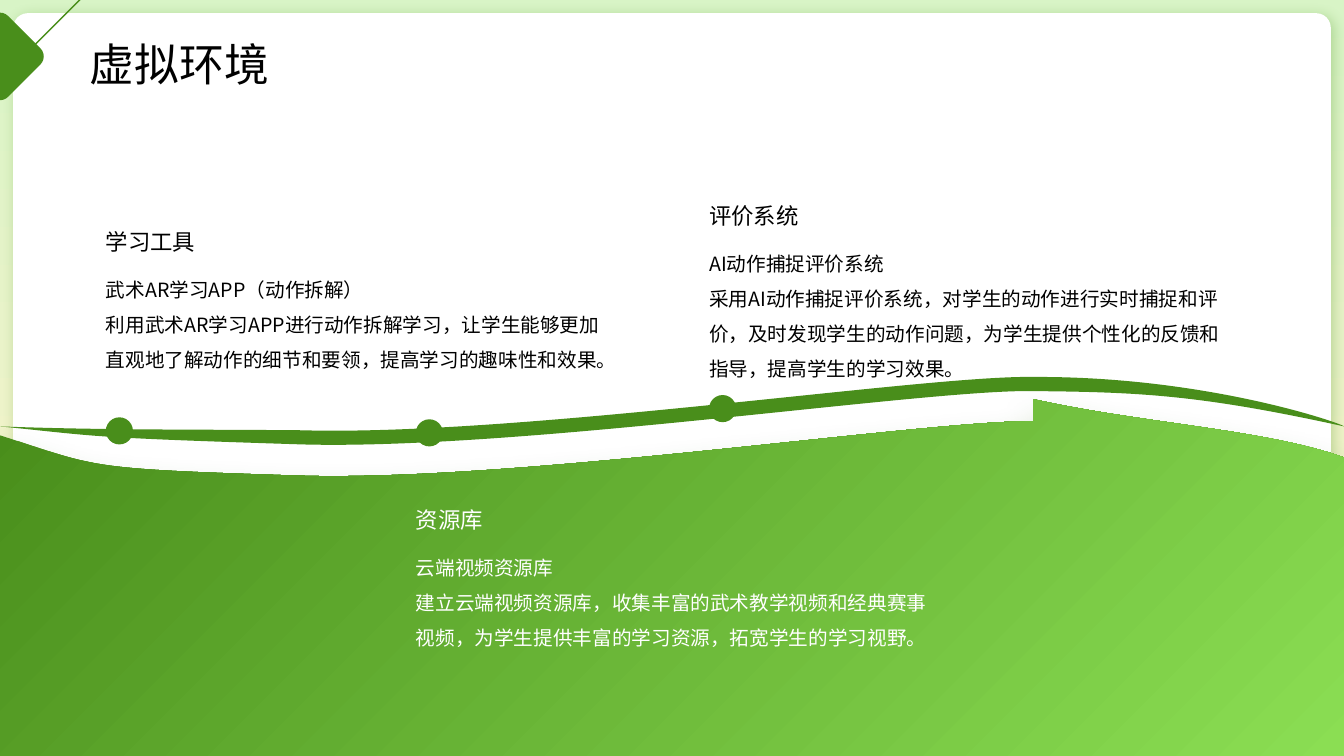
import copy

from pptx import Presentation
from pptx import util as u
from pptx.dml import color
from pptx.enum import shapes, text
from pptx.oxml import ns
from lxml import etree

Pt = u.Pt
FONT = "Noto Sans CJK SC"
GREEN = "498E1B"
WAVE_TOP = 269.3
HILL_START = (738, 15.8)
HILL = [
    [(815, 17.3), (904.3, 21.6), (960, 41.7)],
    [(960, 270.7)], [(0, 270.7)], [(0, 41.7)],
    [(72, 48.9), (58.3, 49.7), (215.3, 54.7)],
    [(371.5, 59), (661.7, 15.1), HILL_START],
]
RIBBON_START = (738, 0)
RIBBON = [
    [(862.6, -0.7), (960, 33.8), (960, 35.3)],
    [(857.5, 12.9), (815, 10.8), (738, 10.1)],
    [(661.7, 8.6), (371.5, 52.5), (215.3, 48.2)],
    [(58.3, 43.2), (72, 42.5), (0, 35.3)],
    [(72, 38.1), (143.3, 37.4), (215.3, 38.1)],
    [(371.5, 42.5), (661.7, -1.5), RIBBON_START],
]
CORNER_START = (6.1, 72.2)
CORNER = [
    [(10.2, 76.2), (15.3, 78.5), (21.4, 78.5)],
    [(78.5, 78.5)], [(0, 0)], [(0, 57)],
    [(0, 62.8), (2.4, 68.3), CORNER_START],
]
TOPICS = [
    (75.6, 135.4, "000000", "学习工具", "武术AR学习APP（动作拆解）",
     "利用武术AR学习APP进行动作拆解学习，让学生能够更加直观地了解动作的细节和要领，提高学习的趣味性和效果。"),
    (506.5, 116.6, "000000", "评价系统", "AI动作捕捉评价系统",
     "采用AI动作捕捉评价系统，对学生的动作进行实时捕捉和评价，及时发现学生的动作问题，为学生提供个性化的反馈和指导，提高学生的学习效果。"),
    (297, 333.8, "FFFFFF", "资源库", "云端视频资源库",
     "建立云端视频资源库，收集丰富的武术教学视频和经典赛事视频，为学生提供丰富的学习资源，拓宽学生的学习视野。"),
]
DOTS = [(506.5, 282.2), (297, 299.5), (75.6, 298.1)]


def rgb(value):
    """Turn a hex string into a colour."""
    return color.RGBColor.from_string(value)


def paint(shape, fill=None, line=None):
    """Give a shape a plain fill or outline and no shadow."""
    shape.shadow.inherit = False
    if fill:
        shape.fill.solid()
        shape.fill.fore_color.rgb = rgb(fill)
    else:
        shape.fill.background()
    if line:
        shape.line.color.rgb = rgb(line)
        shape.line.width = Pt(1)
    else:
        shape.line.fill.background()


def add_gradient(shape, stops, angle):
    """Fill a shape with a two-stop gradient."""
    shape.fill.gradient()
    shape.fill.gradient_angle = angle
    for stop, (position, value) in zip(shape.fill.gradient_stops, stops):
        stop.position = position
        stop.color.rgb = rgb(value)


def add_shadow(shape, value, alpha, blur, distance, angle):
    """Give a shape an outer shadow."""
    effects = shape._element.spPr.find(ns.qn("a:effectLst"))
    shadow = etree.SubElement(
        effects, ns.qn("a:outerShdw"), blurRad=str(Pt(blur)),
        dist=str(Pt(distance)), dir=str(angle * 60000), algn="ctr", rotWithShape="0")
    tint = etree.SubElement(shadow, ns.qn("a:srgbClr"), val=value)
    etree.SubElement(tint, ns.qn("a:alpha"), val=str(alpha * 1000))


def add_preset(slide, kind, left, top, width, height, fill):
    """Add a plain preset shape."""
    shape = slide.shapes.add_shape(kind, Pt(left), Pt(top), Pt(width), Pt(height))
    paint(shape, fill)
    return shape


def add_outline(slide, left, top, start, segments):
    """Add a closed outline of lines and cubic curves placed from left and top."""
    anchors = [(Pt(x), Pt(y)) for x, y in [start] + [segment[-1] for segment in segments]]
    builder = slide.shapes.build_freeform(*anchors[0])
    builder.add_line_segments(anchors[1:], close=True)
    shape = builder.convert_to_shape(Pt(left), Pt(top))
    lines = list(shape._element.iter(ns.qn("a:lnTo")))
    for line, segment in zip(lines, segments):
        if len(segment) == 3:
            curve = line.makeelement(ns.qn("a:cubicBezTo"), {})
            for x, y in segment:
                etree.SubElement(curve, ns.qn("a:pt"), x=str(Pt(x)), y=str(Pt(y)))
            line.getparent().replace(line, curve)
    return shape


def write_text(shape, lines, size, value, spacing, anchor):
    """Write one paragraph whose lines are parted by line breaks."""
    frame = shape.text_frame
    frame.word_wrap = True
    frame.auto_size = text.MSO_AUTO_SIZE.NONE
    frame.vertical_anchor = anchor
    frame.margin_left = frame.margin_right = frame.margin_top = frame.margin_bottom = 0
    paragraph = frame.paragraphs[0]
    paragraph.alignment = text.PP_ALIGN.LEFT
    paragraph.line_spacing = spacing
    for index, line in enumerate(lines):
        if index:
            paragraph.add_line_break()
        run = paragraph.add_run()
        run.text = line
        run.font.size = Pt(size)
        run.font.name = FONT
        run.font.color.rgb = rgb(value)
        latin = run.font._element.find(ns.qn("a:latin"))
        latin.addnext(latin.makeelement(ns.qn("a:ea"), {"typeface": FONT}))
    for line_break in paragraph._p.findall(ns.qn("a:br")):
        line_break.append(copy.deepcopy(paragraph.runs[0].font._element))


def draw_backdrop(slide, width, height, margin=9.4):
    """Draw the tinted page and its white card."""
    page = add_preset(slide, shapes.MSO_SHAPE.RECTANGLE, 0, 0, width, height, "FFFFFF")
    add_gradient(page, [(0, "FFF2CC"), (1, "D8F4C6")], 90)
    card = add_preset(slide, shapes.MSO_SHAPE.ROUNDED_RECTANGLE, margin, margin,
                      width - 2 * margin, height - 2 * margin, "FFFFFF")
    card.adjustments[0] = 0.02
    add_shadow(card, GREEN, 30, 10, 3, 45)


def draw_wave(slide, left, top):
    """Draw the green hill and the ribbon above it."""
    hill = add_outline(slide, left, top, HILL_START, HILL)
    paint(hill, GREEN)
    add_gradient(hill, [(0.01, GREEN), (1, "8BDE53")], 315)
    add_shadow(hill, "376B14", 25, 26, 15, 90)
    paint(add_outline(slide, left, top, RIBBON_START, RIBBON), GREEN)


def draw_topic(slide, left, top, value, heading, subject, detail):
    """Write a heading with its description below."""
    parts = [(0, 46.8, [heading], 16, 1.3, text.MSO_ANCHOR.BOTTOM),
             (54.7, 90.7, [subject, detail], 14, 1.5, text.MSO_ANCHOR.TOP)]
    for offset, height, lines, size, spacing, anchor in parts:
        box = slide.shapes.add_textbox(Pt(left), Pt(top + offset), Pt(365.8), Pt(height))
        write_text(box, lines, size, value, spacing, anchor)


def draw_dot(slide, left, top, size=19.4, core=5.8):
    """Draw a marker with a core at its centre."""
    for diameter in (size, core):
        inset = (size - diameter) / 2
        add_preset(slide, shapes.MSO_SHAPE.OVAL, left + inset, top + inset,
                   diameter, diameter, GREEN)


def draw_header(slide, left, top, width, height):
    """Draw the corner ornament and place the title."""
    corner = add_outline(slide, -34.6, -42.5, CORNER_START, CORNER)
    paint(corner, line=GREEN)
    corner.rotation = 315
    diamond = add_preset(slide, shapes.MSO_SHAPE.ROUNDED_RECTANGLE,
                         -24.5, 15.8, 49, 49, GREEN)
    diamond.rotation = 45
    title = slide.shapes.title
    title.left, title.top, title.width, title.height = map(Pt, (left, top, width, height))
    write_text(title, ["虚拟环境"], 32, "000000", 1.5, text.MSO_ANCHOR.MIDDLE)
    diamond._element.addnext(title._element)


def main():
    """Build and save the slide."""
    presentation = Presentation()
    presentation.slide_width, presentation.slide_height = Pt(960), Pt(540)
    slide = presentation.slides.add_slide(presentation.slide_layouts[5])
    draw_backdrop(slide, 960, 540)
    draw_wave(slide, 0, WAVE_TOP)
    for topic in TOPICS:
        draw_topic(slide, *topic)
    for left, top in DOTS:
        draw_dot(slide, left, top)
    draw_header(slide, 64.1, 18.7, 612.7, 33.8)
    presentation.save("out.pptx")


if __name__ == "__main__":
    main()
